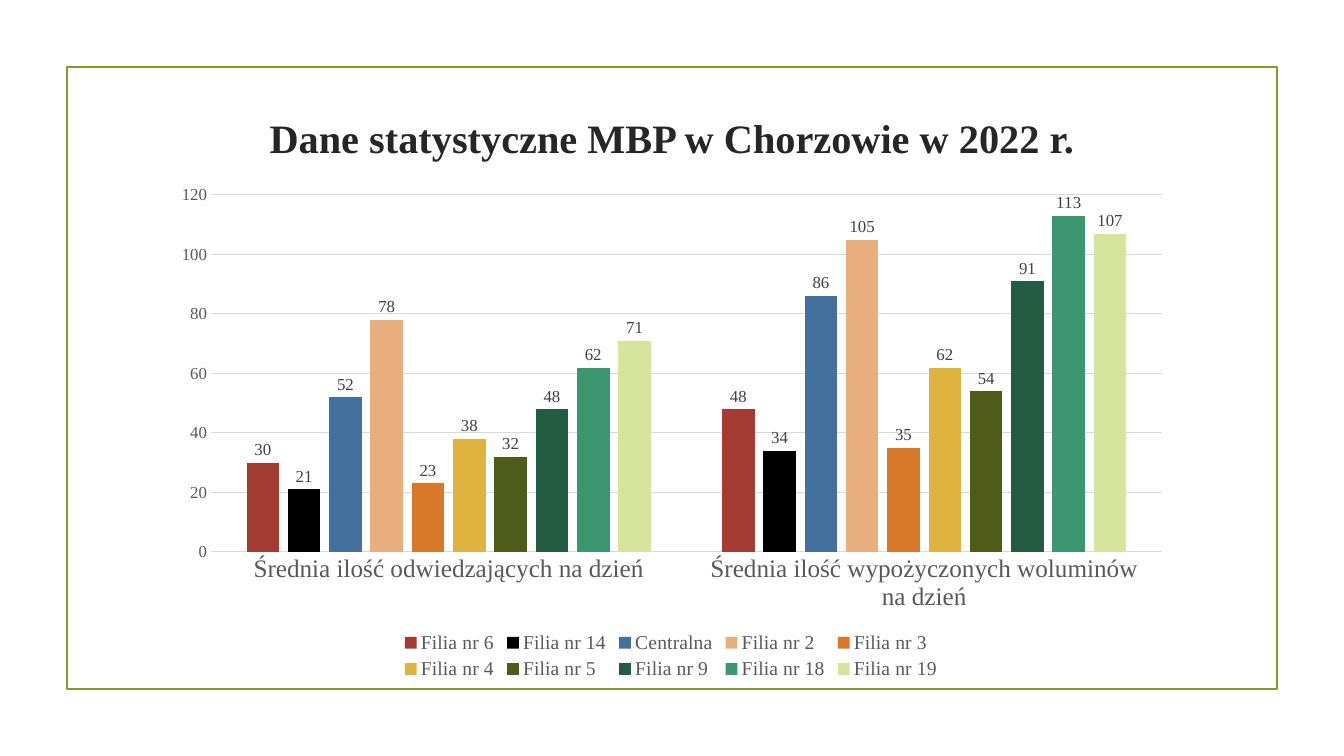
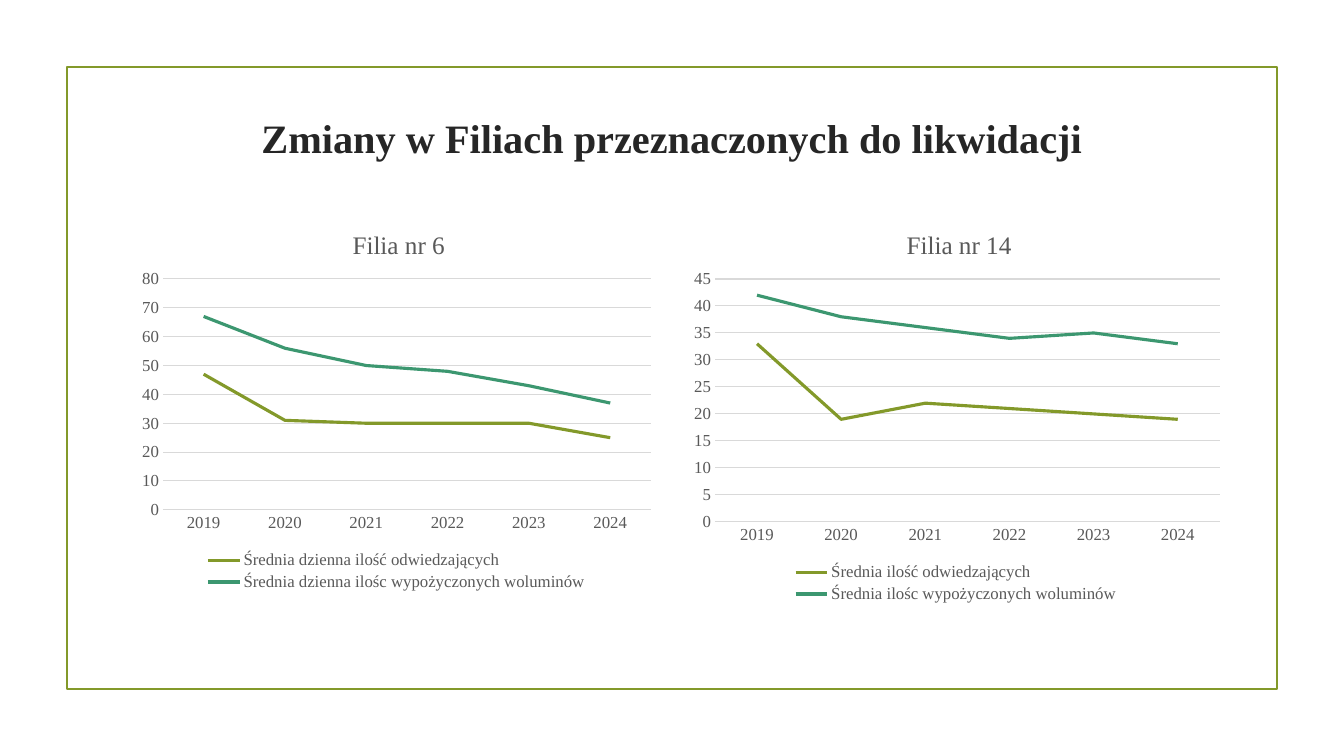
from dataclasses import dataclass

from lxml.etree import SubElement
from pptx import Presentation
from pptx.chart.data import CategoryChartData
from pptx.dml.color import RGBColor
from pptx.enum.chart import (XL_CHART_TYPE, XL_LABEL_POSITION,
                             XL_LEGEND_POSITION, XL_MARKER_STYLE, XL_TICK_MARK)
from pptx.enum.shapes import MSO_SHAPE
from pptx.enum.text import MSO_ANCHOR, PP_ALIGN
from pptx.oxml.ns import qn
from pptx.util import Pt

SLIDE_W, SLIDE_H = 1344, 756
EMU_PER_PX = 12192000 / SLIDE_W


@dataclass(frozen=True)
class Theme:
    font: str = "Times New Roman"
    # Colours
    olive: str = "83992A"
    green: str = "3C9770"
    title: str = "262626"
    label: str = "404040"
    muted: str = "595959"
    grid: str = "D9D9D9"
    bars: tuple = ("A23C33", "000000", "44709D", "E8AE7E", "D97828",
                   "DEB340", "4F5C19", "245B43", "3C9770", "D6E49C")
    # Type sizes and line widths in points
    title_size: float = 28.8
    heading_size: int = 18
    legend_size: int = 14
    small_size: int = 12
    frame_width: float = 1.25
    grid_width: float = 0.75
    series_width: float = 2.25


def px(n):
    return round(n * EMU_PER_PX)


def rgb(color):
    return RGBColor.from_string(color)


def style_font(font, size, color, bold=False):
    font.name = Theme.font
    font.size = Pt(size)
    font.bold = bold
    font.color.rgb = rgb(color)


def write_text(tf, text, size, color, bold=False):
    p = tf.paragraphs[0]
    p.alignment = PP_ALIGN.CENTER
    r = p.add_run()
    r.text = text
    style_font(r.font, size, color, bold)


def style_line(line, color, width):
    line.color.rgb = rgb(color)
    line.width = Pt(width)


def set_layout(parent, index, inner=False, **fractions):
    """Place a chart part by fractions of the chart's own size."""
    for old in parent.findall(qn("c:layout")):
        parent.remove(old)
    layout = SubElement(parent, qn("c:layout"))
    parent.insert(index, layout)
    manual = SubElement(layout, qn("c:manualLayout"))
    values = {"layoutTarget": "inner"} if inner else {}
    values.update(xMode="edge", yMode="edge")
    values.update((key, f"{value:.4f}") for key, value in fractions.items())
    for key, value in values.items():
        SubElement(manual, qn(f"c:{key}")).set("val", value)


class Deck:
    def __init__(self, theme):
        self.theme = theme
        self.prs = Presentation()
        self.prs.slide_width, self.prs.slide_height = px(SLIDE_W), px(SLIDE_H)
        self.s = None

    def add_slide(self, title):
        self.s = self.prs.slides.add_slide(self.prs.slide_layouts[6])
        self.add_frame(67, 67, 1210, 622)
        self.add_title(title)

    def add_frame(self, x, y, w, h):
        sp = self.s.shapes.add_shape(MSO_SHAPE.RECTANGLE, px(x), px(y), px(w), px(h))
        sp.shadow.inherit = False
        sp.fill.background()
        style_line(sp.line, self.theme.olive, self.theme.frame_width)

    def add_title(self, text):
        tf = self.s.shapes.add_textbox(px(143), px(108), px(1058), px(54)).text_frame
        tf.word_wrap = True
        tf.vertical_anchor = MSO_ANCHOR.BOTTOM
        tf.margin_top = tf.margin_bottom = 0
        write_text(tf, text, self.theme.title_size, self.theme.title, bold=True)

    def add_chart(self, kind, box, plot_box, categories, series, top, step,
                  category_size, legend_size):
        """Add a chart; box and plot_box are x, y, w, h on the slide."""
        t = self.theme
        data = CategoryChartData(number_format="General")
        data.categories = categories
        for name, values in series:
            data.add_series(name, values)
        x, y, w, h = box
        chart = self.s.shapes.add_chart(kind, px(x), px(y), px(w), px(h), data).chart
        chart.has_title = False
        style_font(chart.font, t.small_size, t.muted)

        # Axes
        cat, val = chart.category_axis, chart.value_axis
        for axis, size in ((cat, category_size), (val, t.small_size)):
            axis.major_tick_mark = axis.minor_tick_mark = XL_TICK_MARK.NONE
            style_font(axis.tick_labels.font, size, t.muted)
        style_line(cat.format.line, t.grid, t.grid_width)
        val.format.line.fill.background()
        val.has_major_gridlines = True
        style_line(val.major_gridlines.format.line, t.grid, t.grid_width)
        val.minimum_scale, val.maximum_scale, val.major_unit = 0, top, step

        # Legend and plot area
        chart.has_legend = True
        chart.legend.position = XL_LEGEND_POSITION.BOTTOM
        chart.legend.include_in_layout = False
        style_font(chart.legend.font, legend_size, t.muted)
        left, upper, width, height = plot_box
        set_layout(chart.plots[0]._element.getparent(), 0, inner=True,
                   x=(left - x) / w, y=(upper - y) / h, w=width / w, h=height / h)
        return chart

    def add_column_chart(self, box, plot_box, categories, series, top, step):
        t = self.theme
        chart = self.add_chart(XL_CHART_TYPE.COLUMN_CLUSTERED, box, plot_box,
                               categories, series, top, step,
                               t.heading_size, t.legend_size)
        plot = chart.plots[0]
        plot.vary_by_categories = False
        plot.gap_width, plot.overlap = 219, -27
        plot.has_data_labels = True
        labels = plot.data_labels
        labels.show_value = True
        labels.position = XL_LABEL_POSITION.OUTSIDE_END
        style_font(labels.font, t.small_size, t.label)
        for ser, color in zip(plot.series, t.bars):
            ser.format.fill.solid()
            ser.format.fill.fore_color.rgb = rgb(color)

    def add_line_chart(self, title, title_at, box, plot_box, categories, series,
                       top, step):
        t = self.theme
        chart = self.add_chart(XL_CHART_TYPE.LINE, box, plot_box, categories,
                               series, top, step, t.small_size, t.small_size)
        chart.plots[0].vary_by_categories = False
        for ser, color in zip(chart.plots[0].series, (t.olive, t.green)):
            ser.smooth = False
            ser.marker.style = XL_MARKER_STYLE.NONE
            style_line(ser.format.line, color, t.series_width)
        chart.has_title = True
        heading = chart.chart_title
        write_text(heading.text_frame, title, t.heading_size, t.muted)
        x, y, w, h = box
        set_layout(heading._element, 1,
                   x=(title_at[0] - x) / w, y=(title_at[1] - y) / h)


def main():
    deck = Deck(Theme())

    # Branch statistics
    deck.add_slide("Dane statystyczne MBP w Chorzowie w 2022 r.")
    deck.add_column_chart(
        (161, 176, 1020, 508), (211, 195, 951, 357),
        ["Średnia ilość odwiedzających na dzień",
         "Średnia ilość wypożyczonych woluminów na dzień"],
        [("Filia nr 6", (30, 48)), ("Filia nr 14", (21, 34)),
         ("Centralna", (52, 86)), ("Filia nr 2", (78, 105)),
         ("Filia nr 3", (23, 35)), ("Filia nr 4", (38, 62)),
         ("Filia nr 5", (32, 54)), ("Filia nr 9", (48, 91)),
         ("Filia nr 18", (62, 113)), ("Filia nr 19", (71, 107))],
        top=120, step=20)

    # Changes over the years
    deck.add_slide("Zmiany w Filiach przeznaczonych do likwidacji")
    years = [str(year) for year in range(2019, 2025)]
    deck.add_line_chart(
        "Filia nr 6", (348, 225), (132, 205, 529, 390), (163, 279, 488, 231), years,
        [("Średnia dzienna ilość odwiedzających", (47, 31, 30, 30, 30, 25)),
         ("Średnia dzienna ilośc wypożyczonych woluminów", (67, 56, 50, 48, 43, 37))],
        top=80, step=10)
    deck.add_line_chart(
        "Filia nr 14", (902, 225), (682, 205, 548, 402), (715, 279, 505, 243), years,
        [("Średnia ilość odwiedzających", (33, 19, 22, 21, 20, 19)),
         ("Średnia ilośc wypożyczonych woluminów", (42, 38, 36, 34, 35, 33))],
        top=45, step=5)

    deck.prs.save("out.pptx")


if __name__ == "__main__":
    main()
